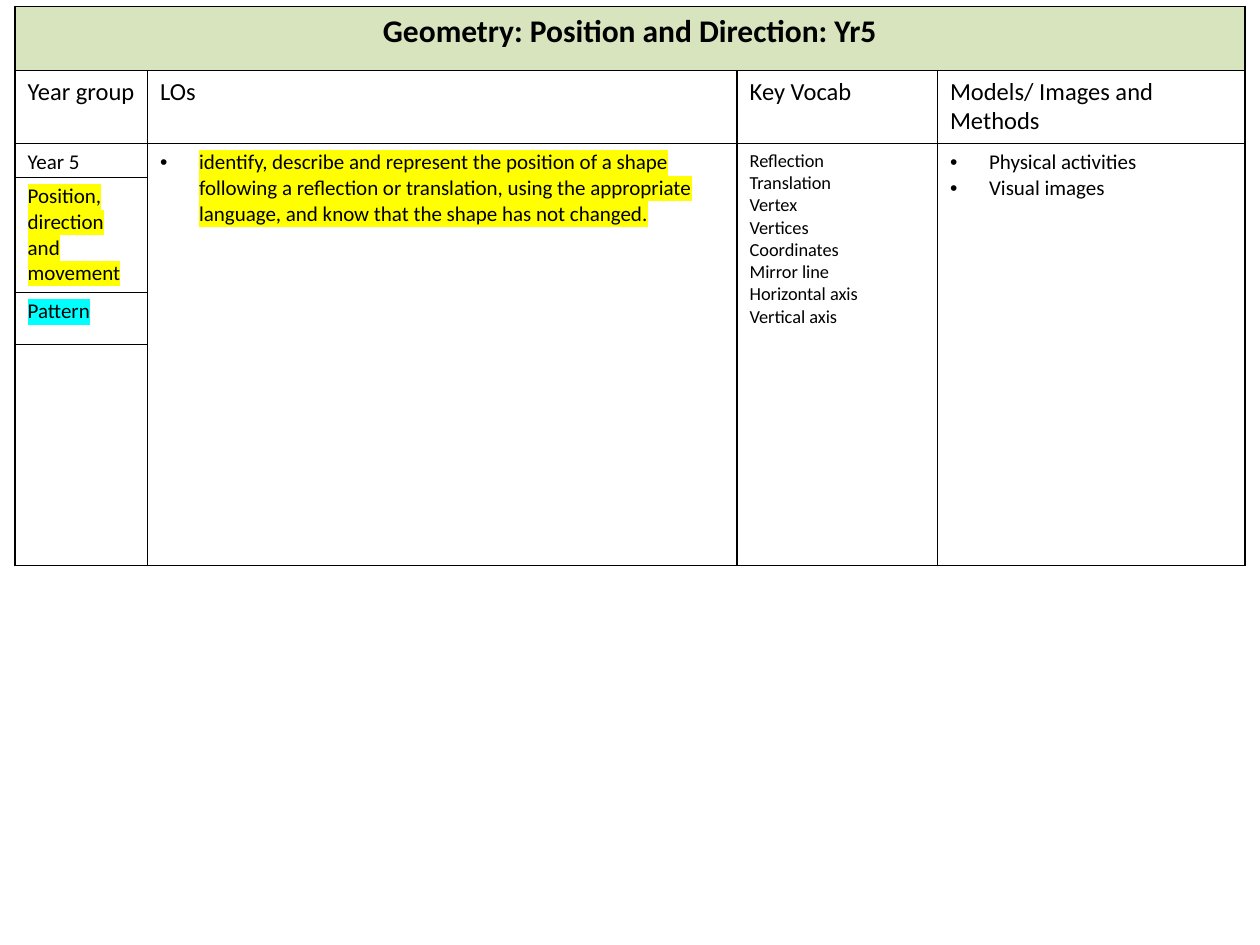
from dataclasses import dataclass

from lxml.etree import SubElement
from pptx import Presentation
from pptx.dml.color import RGBColor
from pptx.enum.text import PP_ALIGN
from pptx.oxml import parse_xml
from pptx.oxml.ns import nsdecls, qn
from pptx.util import Inches, Pt


@dataclass(frozen=True)
class Theme:
    font: str = "Calibri"
    ink: str = "000000"
    banner: str = "D7E4BD"
    yellow: str = "FFFF00"
    cyan: str = "00FFFF"
    title: float = 18
    heading: float = 14
    body: float = 12
    vocabulary: float = 10.5
    border: float = 1


THEME = Theme()

# The slide is a grid of 1000 columns by 750 rows
UNIT = Inches(0.01)
SLIDE_COLUMNS, SLIDE_ROWS = 1000, 750
LEFT, TOP = 12, 5
COLUMNS = (105, 468, 159, 244)
ROWS = (51, 58, 335)
TOPIC_TOP = 141
TOPIC_ROWS = (91, 41)
BULLET_INDENT = 31

HEADINGS = ("Year group", "LOs", "Key Vocab", "Models/ Images and Methods")
OBJECTIVE = (
    "identify, describe and represent the position of a shape following a "
    "reflection or translation, using the appropriate language, and know "
    "that the shape has not changed."
)
VOCABULARY = (
    "Reflection", "Translation", "Vertex", "Vertices", "Coordinates",
    "Mirror line", "Horizontal axis", "Vertical axis",
)
MODELS = ("Physical activities", "Visual images")


def add_bullet(paragraph):
    properties = paragraph._p.get_or_add_pPr()
    indent = BULLET_INDENT * UNIT
    properties.set("marL", str(indent))
    properties.set("indent", str(-indent))
    SubElement(properties, qn("a:buFont")).set("typeface", "Arial")
    SubElement(properties, qn("a:buChar")).set("char", "•")


def highlight_run(run, color):
    fill = run._r.get_or_add_rPr().find(qn("a:solidFill"))
    fill.addnext(parse_xml(
        f'<a:highlight {nsdecls("a")}><a:srgbClr val="{color}"/></a:highlight>'
    ))


def write_text(cell, *lines, size=THEME.body, bold=False, align=PP_ALIGN.LEFT,
               bullet=False, highlight=None):
    frame = cell.text_frame
    for index, line in enumerate(lines):
        paragraph = frame.add_paragraph() if index else frame.paragraphs[0]
        paragraph.alignment = align
        if bullet:
            add_bullet(paragraph)
        run = paragraph.add_run()
        run.text = line
        run.font.name = THEME.font
        run.font.size = Pt(size)
        run.font.bold = bold
        run.font.color.rgb = RGBColor.from_string(THEME.ink)
        if highlight:
            highlight_run(run, highlight)


def add_borders(cell):
    properties = cell._tc.get_or_add_tcPr()
    for position, side in enumerate(("lnL", "lnR", "lnT", "lnB")):
        properties.insert(position, parse_xml(
            f'<a:{side} {nsdecls("a")} w="{Pt(THEME.border)}"><a:solidFill>'
            f'<a:srgbClr val="{THEME.ink}"/></a:solidFill></a:{side}>'
        ))


def add_grid_table(slide, left, top, columns, rows):
    shape = slide.shapes.add_table(
        len(rows), len(columns), left * UNIT, top * UNIT,
        sum(columns) * UNIT, sum(rows) * UNIT,
    )
    table = shape.table
    table.first_row = table.horz_banding = False
    for column, width in zip(table.columns, columns):
        column.width = width * UNIT
    for row, height in zip(table.rows, rows):
        row.height = height * UNIT
    for cell in table.iter_cells():
        cell.fill.background()
        add_borders(cell)
    return table


def add_overview(slide):
    table = add_grid_table(slide, LEFT, TOP, COLUMNS, ROWS)

    # Title banner
    banner = table.cell(0, 0)
    banner.merge(table.cell(0, len(COLUMNS) - 1))
    banner.fill.solid()
    banner.fill.fore_color.rgb = RGBColor.from_string(THEME.banner)
    write_text(banner, "Geometry: Position and Direction: Yr5",
               size=THEME.title, bold=True, align=PP_ALIGN.CENTER)

    # Column headings
    for column, heading in enumerate(HEADINGS):
        write_text(table.cell(1, column), heading, size=THEME.heading)

    # Year 5 content
    year, objectives, vocabulary, models = (
        table.cell(2, column) for column in range(len(COLUMNS))
    )
    write_text(year, "Year 5")
    write_text(objectives, OBJECTIVE, bullet=True, highlight=THEME.yellow)
    write_text(vocabulary, *VOCABULARY, size=THEME.vocabulary)
    write_text(models, *MODELS, bullet=True)


def add_topics(slide):
    table = add_grid_table(slide, LEFT, TOPIC_TOP, COLUMNS[:1], TOPIC_ROWS)
    write_text(table.cell(0, 0), "Position, direction and movement",
               highlight=THEME.yellow)
    write_text(table.cell(1, 0), "Pattern", highlight=THEME.cyan)


def main():
    presentation = Presentation()
    presentation.slide_width = SLIDE_COLUMNS * UNIT
    presentation.slide_height = SLIDE_ROWS * UNIT
    slide = presentation.slides.add_slide(presentation.slide_layouts[6])
    add_overview(slide)
    add_topics(slide)
    presentation.save("out.pptx")


if __name__ == "__main__":
    main()
